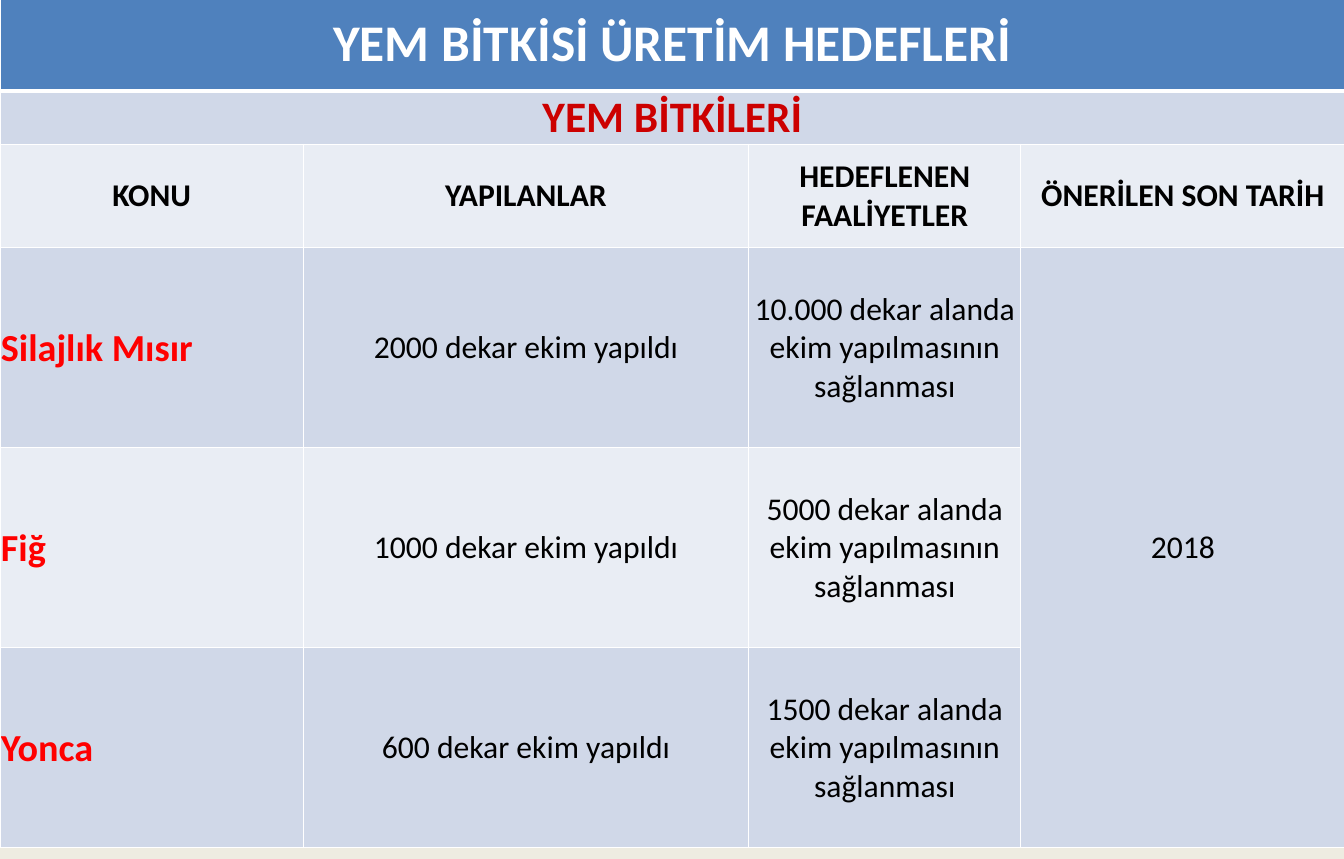
import pptx
import pptx.dml.color
import pptx.enum.text
import pptx.oxml
import pptx.oxml.ns
import pptx.util

SLIDE_WIDTH, SLIDE_HEIGHT = 14.18, 9.06
TABLE_TOP = -0.04
COLUMN_WIDTHS = [3.2, 4.7, 2.87, 3.42]
ROW_HEIGHTS = [1, 0.51, 1.09, 2.11, 2.11, 2.11]

TITLE = "YEM BİTKİSİ ÜRETİM HEDEFLERİ"
SUBTITLE = "YEM BİTKİLERİ"
HEADINGS = ["KONU", "YAPILANLAR", "HEDEFLENEN FAALİYETLER", "ÖNERİLEN SON TARİH"]
DEADLINE = "2018"
CROPS = [
    ("Silajlık Mısır", "2000 dekar ekim yapıldı", "10.000 dekar alanda ekim yapılmasının sağlanması"),
    ("Fiğ", "1000 dekar ekim yapıldı", "5000 dekar alanda ekim yapılmasının sağlanması"),
    ("Yonca", "600 dekar ekim yapıldı", "1500 dekar alanda ekim yapılmasının sağlanması"),
]

BACKGROUND, WHITE = "EEECE1", "FFFFFF"
TITLE_FILL, BAND_FILLS = "4F81BD", ["E9EDF4", "D0D8E8"]
CENTER = pptx.enum.text.PP_ALIGN.CENTER
LEFT = pptx.enum.text.PP_ALIGN.LEFT
# size, colour, bold, alignment
STYLES = {
    "title": (39, WHITE, True, CENTER),
    "subtitle": (33, "CC0000", True, CENTER),
    "heading": (24, "000000", True, CENTER),
    "crop": (29, "FF0000", True, LEFT),
    "body": (24, "000000", False, CENTER),
}


def rgb(hex_colour):
    return pptx.dml.color.RGBColor.from_string(hex_colour)


def add_borders(cell, row):
    """Draw white cell edges, thicker between the title and the rows below."""
    widths = {"L": 1, "R": 1, "T": 3 if row == 1 else 1, "B": 3 if row == 0 else 1}
    properties = cell._tc.get_or_add_tcPr()
    for side, width in widths.items():
        properties.append(pptx.oxml.parse_xml(
            f'<a:ln{side} {pptx.oxml.ns.nsdecls("a")} w="{pptx.util.Pt(width)}">'
            f'<a:solidFill><a:srgbClr val="{WHITE}"/></a:solidFill></a:ln{side}>'))


def format_cell(cell, row):
    inset = pptx.util.Inches(0.01 if row >= 2 else 0)
    settings = {
        "margin_left": inset, "margin_right": inset, "margin_top": inset,
        "margin_bottom": 0, "vertical_anchor": pptx.enum.text.MSO_ANCHOR.MIDDLE,
    }
    for name, value in settings.items():
        setattr(cell, name, value)
    add_borders(cell, row)
    cell.fill.solid()
    cell.fill.fore_color.rgb = rgb(BAND_FILLS[row % 2] if row else TITLE_FILL)


def write(cell, text, style):
    size, colour, bold, alignment = STYLES[style]
    paragraph = cell.text_frame.paragraphs[0]
    paragraph.alignment = alignment
    run = paragraph.add_run()
    run.text = text
    for name, value in {"name": "Calibri", "size": pptx.util.Pt(size), "bold": bold}.items():
        setattr(run.font, name, value)
    run.font.color.rgb = rgb(colour)


def main():
    presentation = pptx.Presentation()
    presentation.slide_width = pptx.util.Inches(SLIDE_WIDTH)
    presentation.slide_height = pptx.util.Inches(SLIDE_HEIGHT)
    slide = presentation.slides.add_slide(presentation.slide_layouts[6])
    slide.background.fill.solid()
    slide.background.fill.fore_color.rgb = rgb(BACKGROUND)

    targets = slide.shapes.add_table(
        len(ROW_HEIGHTS), len(COLUMN_WIDTHS), 0, pptx.util.Inches(TABLE_TOP),
        pptx.util.Inches(sum(COLUMN_WIDTHS)), pptx.util.Inches(sum(ROW_HEIGHTS))).table
    for column, width in zip(targets.columns, COLUMN_WIDTHS):
        column.width = pptx.util.Inches(width)
    for row, height in enumerate(ROW_HEIGHTS):
        targets.rows[row].height = pptx.util.Inches(height)
        for cell in targets.rows[row].cells:
            format_cell(cell, row)

    last_row, last_column = len(ROW_HEIGHTS) - 1, len(COLUMN_WIDTHS) - 1
    first_crop_row = len(ROW_HEIGHTS) - len(CROPS)
    for row, (text, style) in enumerate([(TITLE, "title"), (SUBTITLE, "subtitle")]):
        targets.cell(row, 0).merge(targets.cell(row, last_column))
        write(targets.cell(row, 0), text, style)
    for column, heading in enumerate(HEADINGS):
        write(targets.cell(first_crop_row - 1, column), heading, "heading")
    for row, crop in enumerate(CROPS, first_crop_row):
        for column, text in enumerate(crop):
            write(targets.cell(row, column), text, "body" if column else "crop")
    deadline_cell = targets.cell(first_crop_row, last_column)
    deadline_cell.merge(targets.cell(last_row, last_column))
    deadline_cell.fill.fore_color.rgb = rgb(BAND_FILLS[1])
    write(deadline_cell, DEADLINE, "body")

    presentation.save("out.pptx")


if __name__ == "__main__":
    main()
